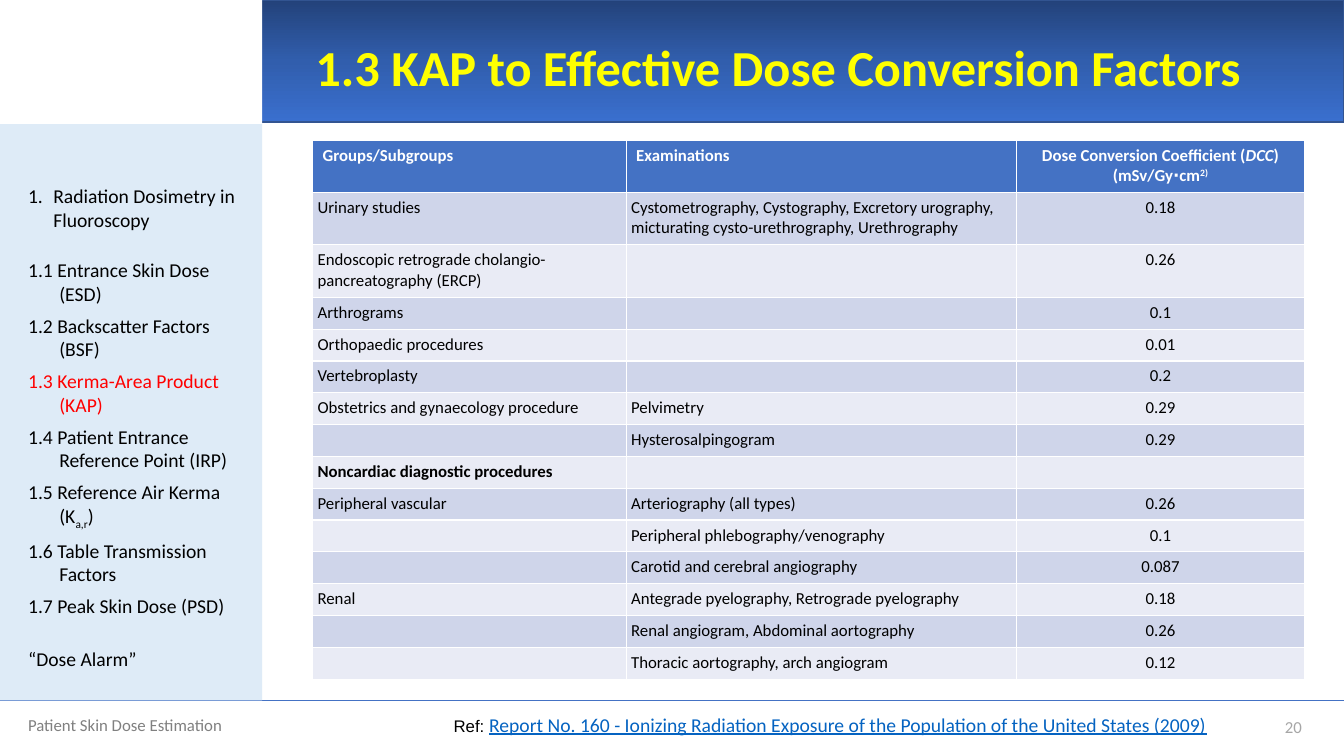
from copy import deepcopy
from dataclasses import dataclass

from lxml.etree import SubElement
from pptx import Presentation
from pptx.dml.color import RGBColor as RGB
from pptx.enum.shapes import MSO_CONNECTOR as CONNECTOR, MSO_SHAPE as SHAPE
from pptx.enum.text import MSO_ANCHOR as ANCHOR, PP_ALIGN as ALIGN
from pptx.oxml.ns import qn
from pptx.util import Pt

PX = 9144


@dataclass(frozen=True)
class Theme:
    font: str = "Calibri"
    ref_font: str = "Arial"
    title_size: int = 36
    body_size: int = 14
    small_size: int = 12
    white: str = "FFFFFF"
    black: str = "000000"
    title: str = "FFFF00"
    active: str = "FF0000"
    link: str = "0563C1"
    footer: str = "808080"
    page: str = "A6A6A6"
    accent: str = "4472C4"
    sidebar: str = "DEEBF7"
    banner: tuple = ("23427A", "315EAD", "3A6FCE")
    banner_edge: str = "325491"
    bands: tuple = ("CFD5EA", "E9EBF5")


THEME = Theme()

COLUMNS = (311, 387, 286)
TALL_ROWS = 3
TALL_HEIGHT = 52
TABLE_HEIGHT = 535
HEADER = (
    ["Groups/Subgroups"],
    ["Examinations"],
    ["Dose Conversion Coefficient (", ("DCC", "italic"), ") (mSv/Gy∙cm", ("2)", 30)],
)
SECTION = "Noncardiac diagnostic procedures"
DOSES = (
    ("Urinary studies",
     "Cystometrography, Cystography, Excretory urography, "
     "micturating cysto-urethrography, Urethrography", "0.18"),
    ("Endoscopic retrograde cholangio-pancreatography (ERCP)", "", "0.26"),
    ("Arthrograms", "", "0.1"),
    ("Orthopaedic procedures", "", "0.01"),
    ("Vertebroplasty", "", "0.2"),
    ("Obstetrics and gynaecology procedure", "Pelvimetry", "0.29"),
    ("", "Hysterosalpingogram", "0.29"),
    (SECTION, "", ""),
    ("Peripheral vascular", "Arteriography (all types)", "0.26"),
    ("", "Peripheral phlebography/venography", "0.1"),
    ("", "Carotid and cerebral angiography", "0.087"),
    ("Renal", "Antegrade pyelography, Retrograde pyelography", "0.18"),
    ("", "Renal angiogram, Abdominal aortography", "0.26"),
    ("", "Thoracic aortography, arch angiogram", "0.12"),
)
CHAPTER = "Radiation Dosimetry in Fluoroscopy"
ACTIVE = "1.3 Kerma-Area Product (KAP)"
OUTLINE = (
    (["1.1 Entrance Skin Dose (ESD)"], 19),
    (["1.2 Backscatter Factors (BSF)"], 6),
    ([ACTIVE], 6),
    (["1.4 Patient Entrance Reference Point (IRP)"], 6),
    (["1.5 Reference Air Kerma (K", ("a,r", -25), ")"], 6),
    (["1.6 Table Transmission Factors"], 6),
    (["1.7 Peak Skin Dose (PSD)"], 6),
    (["“Dose Alarm”"], 21),
)


def px(*lengths):
    return [length * PX for length in lengths]


def style(font, size, color, bold=False, name=THEME.font):
    font.name, font.size, font.bold = name, Pt(size), bold
    font.color.rgb = RGB.from_string(color)


def write(paragraph, pieces):
    for piece in pieces:
        words, effect = (piece, None) if isinstance(piece, str) else piece
        run = paragraph.add_run()
        run.text = words
        if effect == "italic":
            run.font.italic = True
        elif effect:
            run._r.get_or_add_rPr().set("baseline", str(effect * 1000))


def hang(paragraph, indent):
    props = paragraph._p.get_or_add_pPr()
    props.set("marL", str(indent * PX))
    props.set("indent", str(-indent * PX))
    return props


def add_panel(slide, box, fill):
    panel = slide.shapes.add_shape(SHAPE.RECTANGLE, *px(*box))
    panel.shadow.inherit = False
    panel.fill.solid()
    panel.fill.fore_color.rgb = RGB.from_string(fill)
    panel.line.fill.background()
    return panel


def add_banner(slide, box):
    banner = add_panel(slide, box, THEME.accent)
    banner.fill.gradient()
    banner.fill.gradient_angle = 270
    stops = banner._element.spPr.find(qn("a:gradFill")).find(qn("a:gsLst"))
    stops.insert(1, deepcopy(stops[0]))
    for index, (stop, color) in enumerate(zip(banner.fill.gradient_stops, THEME.banner)):
        stop.position = index / 2
        stop.color.rgb = RGB.from_string(color)
    banner.line.color.rgb = RGB.from_string(THEME.banner_edge)
    banner.line.width = Pt(1)


def add_rule(slide, y, width):
    rule = slide.shapes.add_connector(CONNECTOR.STRAIGHT, *px(0, y, width, y))
    rule.line.color.rgb = RGB.from_string(THEME.accent)
    rule.line.width = Pt(0.5)
    SubElement(rule._element.spPr, qn("a:effectLst"))


def add_text_frame(slide, box, anchor=ANCHOR.TOP):
    frame = slide.shapes.add_textbox(*px(*box)).text_frame
    frame.word_wrap = True
    frame.vertical_anchor = anchor
    return frame


def add_label(slide, box, words, size, color, bold=False,
              align=ALIGN.LEFT, anchor=ANCHOR.TOP):
    label = add_text_frame(slide, box, anchor).paragraphs[0]
    label.alignment = align
    write(label, [words])
    style(label.font, size, color, bold)
    return label


def add_reference(slide, box):
    citation = add_text_frame(slide, box).paragraphs[0]
    citation.alignment = ALIGN.RIGHT
    write(citation, ["Ref: ", "Report No. 160 - Ionizing Radiation Exposure of the "
                              "Population of the United States (2009)"])
    prefix, report = citation.runs
    style(prefix.font, THEME.small_size, THEME.black, name=THEME.ref_font)
    style(report.font, THEME.body_size, THEME.link)
    report.font.underline = True


def add_outline(slide, box):
    frame = add_text_frame(slide, box)
    chapter = frame.paragraphs[0]
    SubElement(hang(chapter, 25), qn("a:buFont"), typeface="+mj-lt")
    SubElement(chapter._p.pPr, qn("a:buAutoNum"), type="arabicPeriod")
    write(chapter, [CHAPTER])
    style(chapter.font, THEME.body_size, THEME.black)
    for pieces, gap in OUTLINE:
        entry = frame.add_paragraph()
        hang(entry, 31)
        entry.space_before = Pt(gap)
        write(entry, pieces)
        color = THEME.active if pieces == [ACTIVE] else THEME.black
        style(entry.font, THEME.body_size, color)


def fill_cell(cell, pieces, fill, color, bold, centred):
    cell.fill.solid()
    cell.fill.fore_color.rgb = RGB.from_string(fill)
    entry = cell.text_frame.paragraphs[0]
    entry.alignment = ALIGN.CENTER if centred else ALIGN.LEFT
    write(entry, pieces)
    style(entry.font, THEME.small_size, color, bold)


def add_dose_table(slide, left, top):
    count = len(DOSES) + 1
    table = slide.shapes.add_table(
        count, len(COLUMNS), *px(left, top, sum(COLUMNS), TABLE_HEIGHT)).table
    for column, width in zip(table.columns, COLUMNS):
        column.width = width * PX
    short = (TABLE_HEIGHT - TALL_ROWS * TALL_HEIGHT) * PX // (count - TALL_ROWS)
    for index, row in enumerate(table.rows):
        row.height = TALL_HEIGHT * PX if index < TALL_ROWS else short
    for col, pieces in enumerate(HEADER):
        fill_cell(table.cell(0, col), pieces, THEME.accent, THEME.white, True, col == 2)
    for index, dose in enumerate(DOSES):
        for col, words in enumerate(dose):
            cell = table.cell(index + 1, col)
            cell.margin_left = cell.margin_right = 5 * PX
            cell.margin_top = cell.margin_bottom = 5 * PX if words else 0
            fill_cell(cell, [words] if words else [], THEME.bands[index % 2],
                      THEME.black, words == SECTION, col == 2)


def main():
    deck = Presentation()
    deck.slide_width, deck.slide_height = px(1333, 750)
    slide = deck.slides.add_slide(deck.slide_layouts[6])
    add_rule(slide, 695, 1333)
    add_panel(slide, (0, 121, 260, 574), THEME.sidebar)
    add_banner(slide, (0, 0, 1333, 121))
    add_panel(slide, (0, 0, 260, 123), THEME.white)
    title = add_label(slide, (303, 31, 998, 78), "1.3 KAP to Effective Dose Conversion Factors",
                      THEME.title_size, THEME.title, bold=True, anchor=ANCHOR.MIDDLE)
    title.line_spacing = 0.9
    add_label(slide, (18, 704, 450, 40), "Patient Skin Dose Estimation",
              THEME.small_size, THEME.footer)
    add_label(slide, (1001, 701, 300, 40), "20", THEME.small_size, THEME.page,
              align=ALIGN.RIGHT, anchor=ANCHOR.MIDDLE)
    add_dose_table(slide, 310, 139)
    add_reference(slide, (293, 702, 914, 34))
    add_outline(slide, (18, 178, 231, 542))
    deck.save("out.pptx")


if __name__ == "__main__":
    main()
